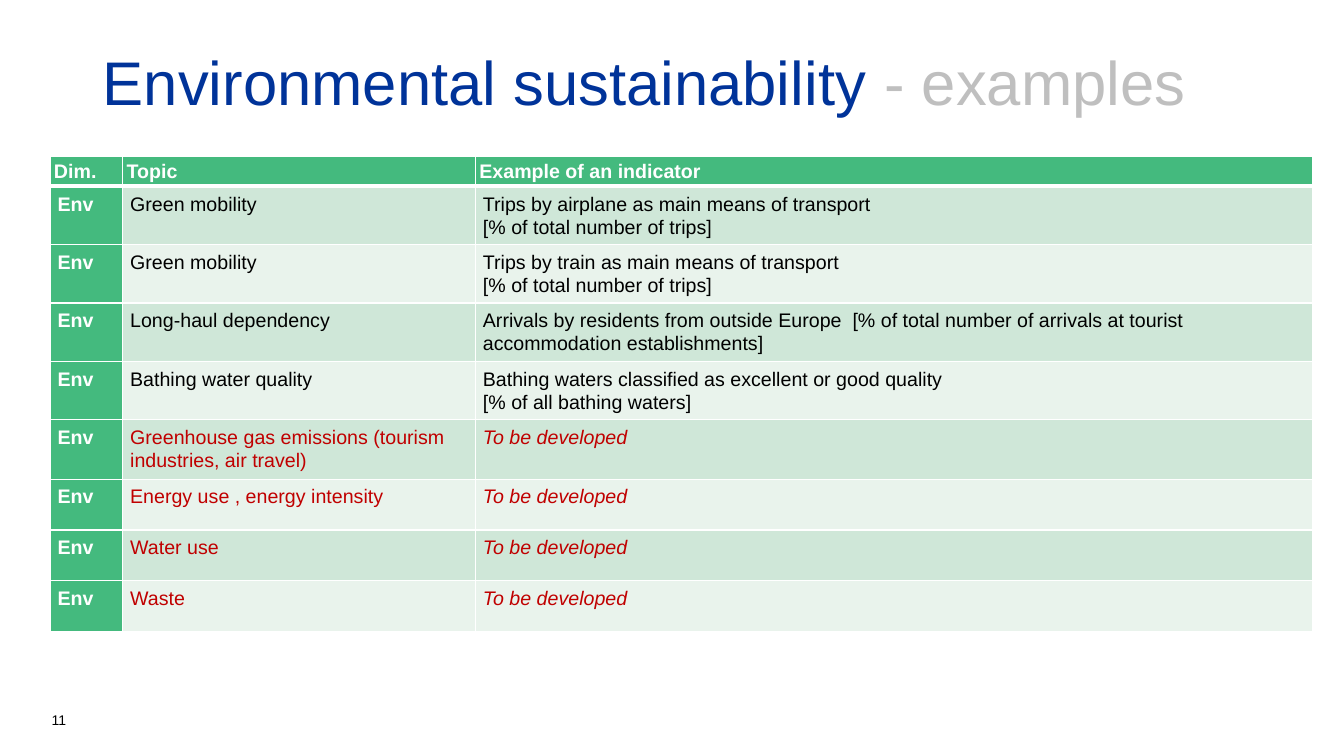
from lxml.etree import SubElement
from pptx import Presentation
from pptx.dml.color import RGBColor
from pptx.enum.text import MSO_ANCHOR as Anchor, MSO_AUTO_SIZE as AutoSize, PP_ALIGN as Align
from pptx.oxml.ns import qn
from pptx.util import Cm, Pt

FONT = "Arial"
WHITE, BLACK, BLUE, GREY, RED = "FFFFFF", "000000", "003399", "BFBFBF", "C00000"
GREEN, BANDS = "44BA7E", ("CFE7D8", "E9F3EC")

HEADINGS = ("Dim.", "Topic", "Example of an indicator")
PENDING = "To be developed"
INDICATORS = [
    ("Green mobility",
     "Trips by airplane as main means of transport\n[% of total number of trips]"),
    ("Green mobility",
     "Trips by train as main means of transport\n[% of total number of trips]"),
    ("Long-haul dependency",
     "Arrivals by residents from outside Europe  [% of total number of arrivals "
     "at tourist accommodation establishments]"),
    ("Bathing water quality",
     "Bathing waters classified as excellent or good quality\n[% of all bathing waters]"),
    ("Greenhouse gas emissions (tourism industries, air travel)", PENDING),
    ("Energy use , energy intensity", PENDING),
    ("Water use", PENDING),
    ("Waste", PENDING),
]
COLUMN_WIDTHS = (1.83, 8.89, 21.1)
ROW_HEIGHTS = [0.74] + [1.47] * 4 + [1.5] + [1.28] * 3


def color(code):
    return RGBColor.from_string(code)


def format_span(span, size, code, bold=False, italic=False):
    font = span.font
    font.name, font.size = FONT, Pt(size)
    font.bold, font.italic = bold, italic
    font.color.rgb = color(code)


def add_title(page, parts):
    title = page.shapes.title
    title.left, title.top, title.width, title.height = Cm(2.34), Cm(1.02), Cm(29.2), Cm(2.26)
    title.fill.solid()
    title.fill.fore_color.rgb = color(WHITE)
    frame = title.text_frame
    frame.auto_size, frame.vertical_anchor = AutoSize.NONE, Anchor.MIDDLE
    para = frame.paragraphs[0]
    para.alignment, para.line_spacing = Align.LEFT, 0.9
    for text, code in parts:
        span = para.add_run()
        span.text = text
        format_span(span, 44, code)


def add_borders(cell, bottom=1):
    properties = cell._tc.get_or_add_tcPr()
    for index, (side, width) in enumerate((("L", 1), ("R", 1), ("T", 1), ("B", bottom))):
        line = SubElement(properties, qn(f"a:ln{side}"), w=str(Pt(width)))
        fill = SubElement(line, qn("a:solidFill"))
        SubElement(fill, qn("a:srgbClr"), val=WHITE)
        # Borders come before the fill in the cell properties
        properties.insert(index, line)


def fill_cell(cell, text, fill, code, bold=False, italic=False, header=False):
    cell.fill.solid()
    cell.fill.fore_color.rgb = color(fill)
    add_borders(cell, 3 if header else 1)
    cell.vertical_anchor = Anchor.MIDDLE if header else Anchor.TOP
    cell.margin_left = cell.margin_right = Cm(0.1 if header else 0.19)
    cell.margin_top = cell.margin_bottom = Cm(0.08 if header else 0.15)
    cell.text_frame.text = text
    for para in cell.text_frame.paragraphs:
        para.line_spacing = 1.05
        for span in para.runs:
            format_span(span, 14, code, bold, italic)


def add_indicator_table(page):
    frame = page.shapes.add_table(
        len(ROW_HEIGHTS), len(COLUMN_WIDTHS), Cm(1.26), Cm(3.95),
        Cm(sum(COLUMN_WIDTHS)), Cm(sum(ROW_HEIGHTS)))
    table = frame.table
    for column, width in zip(table.columns, COLUMN_WIDTHS):
        column.width = Cm(width)
    for row, height in zip(table.rows, ROW_HEIGHTS):
        row.height = Cm(height)

    # Header row
    for index, heading in enumerate(HEADINGS):
        fill_cell(table.cell(0, index), heading, GREEN, WHITE, bold=True, header=True)

    # Indicators; those still to be developed are red
    for row, (topic, example) in enumerate(INDICATORS, start=1):
        pending = example == PENDING
        code = RED if pending else BLACK
        band = BANDS[(row - 1) % 2]
        fill_cell(table.cell(row, 0), "Env", GREEN, WHITE, bold=True)
        fill_cell(table.cell(row, 1), topic, band, code)
        fill_cell(table.cell(row, 2), example, band, code, italic=pending)


def add_page_number(page, number):
    box = page.shapes.add_textbox(Cm(1.05), Cm(17.45), Cm(7.62), Cm(1.02))
    frame = box.text_frame
    frame.word_wrap, frame.vertical_anchor = True, Anchor.BOTTOM
    frame.text = number
    format_span(frame.paragraphs[0].runs[0], 10, BLACK)


def main():
    deck = Presentation()
    deck.slide_width, deck.slide_height = Cm(33.87), Cm(19.05)
    page = deck.slides.add_slide(deck.slide_layouts[5])
    add_title(page, [("Environmental sustainability ", BLUE), ("- examples", GREY)])
    add_indicator_table(page)
    add_page_number(page, "11")
    deck.save("out.pptx")


if __name__ == "__main__":
    main()
